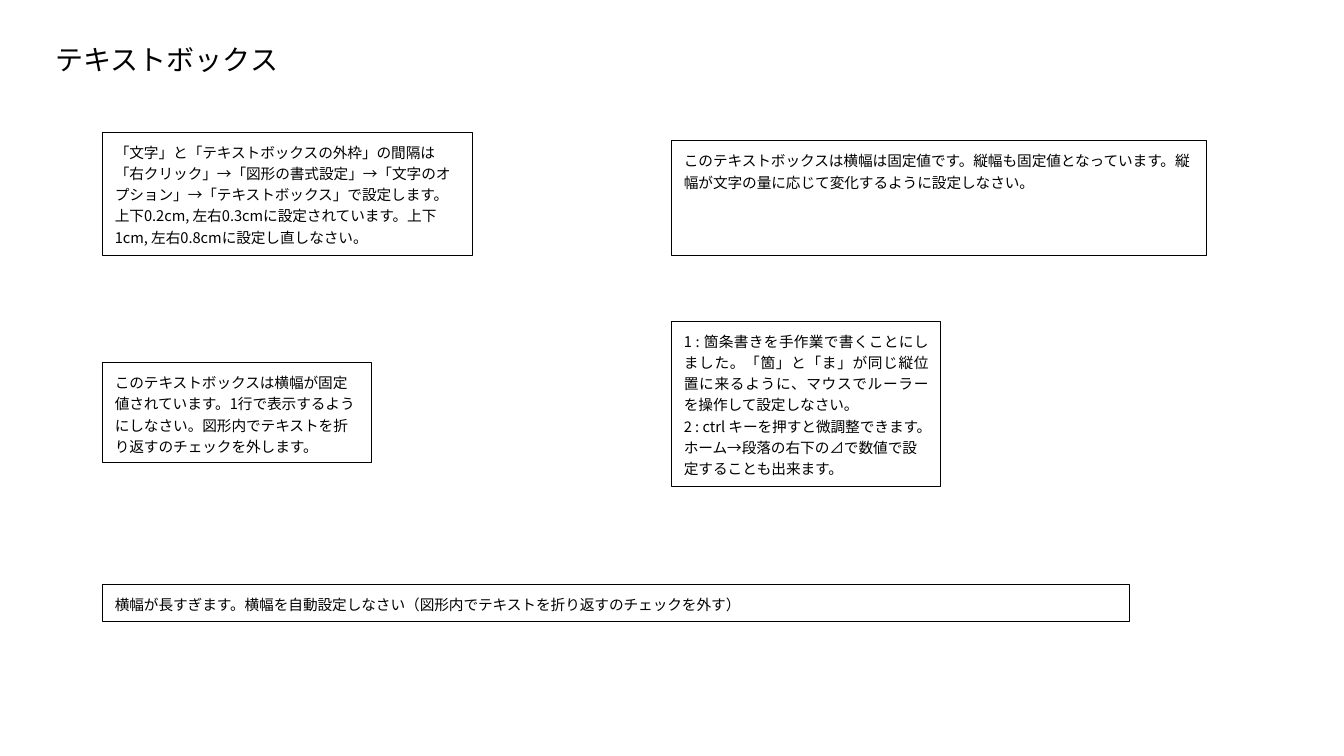
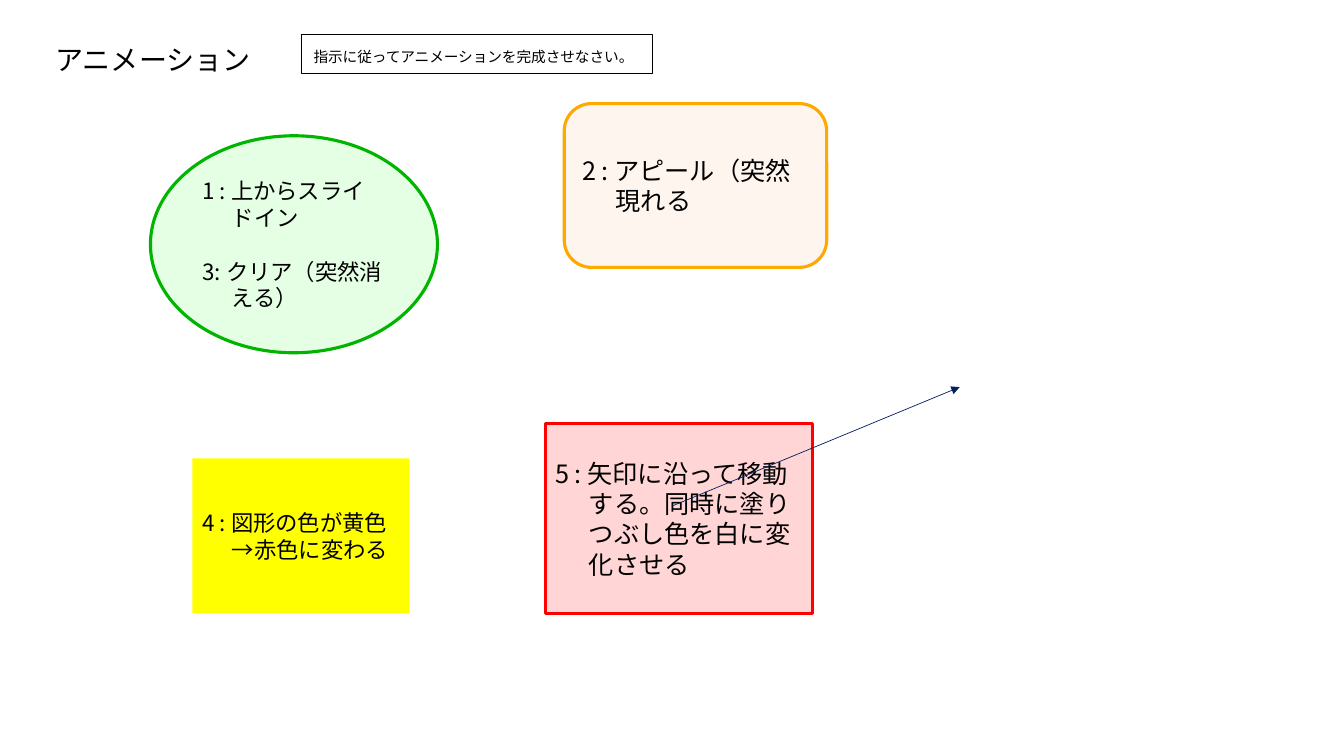
from lxml import etree
from pptx import Presentation
from pptx.dml.color import RGBColor
from pptx.enum.shapes import MSO_CONNECTOR, MSO_SHAPE
from pptx.enum.text import MSO_ANCHOR, MSO_AUTO_SIZE, PP_ALIGN
from pptx.oxml.ns import qn
from pptx.util import Pt

RECT = MSO_SHAPE.RECTANGLE
ROUNDED = MSO_SHAPE.ROUNDED_RECTANGLE
OVAL = MSO_SHAPE.OVAL
STRAIGHT = MSO_CONNECTOR.STRAIGHT
TOP, MIDDLE = MSO_ANCHOR.TOP, MSO_ANCHOR.MIDDLE
GROW, FIXED = MSO_AUTO_SIZE.SHAPE_TO_FIT_TEXT, MSO_AUTO_SIZE.NONE
LEFT, JUSTIFY = PP_ALIGN.LEFT, PP_ALIGN.JUSTIFY

FONT = "Noto Sans CJK JP"
BLACK, WHITE, NAVY = "000000", "FFFFFF", "002060"
LINE_HEIGHT = 1.2
LEFT_COLUMN, RIGHT_COLUMN = 73.5, 480

TITLE = {"vertical_anchor": MIDDLE, "word_wrap": True, "auto_size": FIXED}
STEP = {"vertical_anchor": MIDDLE, "word_wrap": True, "auto_size": FIXED}
FRAME = {
    "vertical_anchor": TOP, "word_wrap": True, "auto_size": GROW,
    "margin_left": Pt(8.5), "margin_right": Pt(8.5),
    "margin_top": Pt(5.7), "margin_bottom": Pt(5.7),
}


def color(hex_value):
    return RGBColor.from_string(hex_value)


def write(shape, texts, size, frame_format, spacing=1, indent=0, gap=0, aligns=(LEFT,)):
    frame = shape.text_frame
    for name, value in frame_format.items():
        setattr(frame, name, value)
    for index, text in enumerate(texts):
        paragraph = frame.paragraphs[0] if index == 0 else frame.add_paragraph()
        paragraph_format = {
            "alignment": aligns[min(index, len(aligns) - 1)],
            "line_spacing": Pt(round(size * LINE_HEIGHT * spacing, 1)),
            "space_before": Pt(gap if index else 0),
        }
        for name, value in paragraph_format.items():
            setattr(paragraph, name, value)
        if indent:
            properties = paragraph._p.get_or_add_pPr()
            properties.set("marL", str(Pt(indent)))
            properties.set("indent", str(-Pt(indent)))
        run = paragraph.add_run()
        run.text = text
        run.font.size = Pt(size)
        run.font.color.rgb = color(BLACK)
        run.font.name = FONT
        run_properties = run._r.get_or_add_rPr()
        run_properties.set("lang", "ja-JP")
        etree.SubElement(run_properties, qn("a:ea")).set("typeface", FONT)


deck = Presentation()
deck.slide_width, deck.slide_height = Pt(960), Pt(540)

slides = []
for heading in ("テキストボックス", "アニメーション"):
    slide = deck.slides.add_slide(deck.slide_layouts[6])
    slide.background.fill.solid()
    slide.background.fill.fore_color.rgb = color(WHITE)
    title = slide.shapes.add_textbox(Pt(32.5), Pt(27.5), Pt(206), Pt(32.5))
    write(title, [heading], 20, TITLE, spacing=0.9)
    slides.append(slide)
exercise_slide, animation_slide = slides

steps = [
    (OVAL, (107.5, 97, 205, 155), "E5FFE5", "00B400", 2.25, 16, 21,
     ["1 : 上からスライドイン", "3: クリア（突然消える）"]),
    (RECT, (137.5, 327.5, 155, 110.5), "FFFF00", None, 0, 16, 21,
     ["4 : 図形の色が黄色→赤色に変わる"]),
    (ROUNDED, (403, 74, 187.5, 117), "FFF5EF", "FEA900", 2.25, 18, 24,
     ["2 : アピール（突然現れる"]),
    (RECT, (389.5, 302.5, 191, 136), "FFD5D5", "FF0000", 2, 18, 24,
     ["5 : 矢印に沿って移動する。同時に塗りつぶし色を白に変化させる"]),
]
for outline, place, fill, border, width, size, indent, texts in steps:
    step = animation_slide.shapes.add_shape(outline, *map(Pt, place))
    step.shadow.inherit = False
    step.fill.solid()
    step.fill.fore_color.rgb = color(fill)
    if border:
        step.line.color.rgb = color(border)
        step.line.width = Pt(width)
    else:
        step.line.fill.background()
    write(step, texts, size, STEP, indent=indent, gap=size * LINE_HEIGHT)

motion_arrow = animation_slide.shapes.add_connector(
    STRAIGHT, Pt(480), Pt(361.5), Pt(685.5), Pt(276.5))
motion_arrow.line.color.rgb = color(NAVY)
motion_arrow.line.width = Pt(0.5)
etree.SubElement(motion_arrow.line._get_or_add_ln(), qn("a:tailEnd")).set("type", "triangle")
etree.SubElement(motion_arrow._element.spPr, qn("a:effectLst"))

framed_texts = [
    (exercise_slide, (LEFT_COLUMN, 94.5, 264, 88), {}, 1.2, (LEFT,),
     ["「文字」と「テキストボックスの外枠」の間隔は「右クリック」→「図形の書式設定」→「文字のオプション」→「テキストボックス」で設定します。上下0.2cm, 左右0.3cmに設定されています。上下1cm, 左右0.8cmに設定し直しなさい。"]),
    (exercise_slide, (RIGHT_COLUMN, 100.5, 382, 82), {"auto_size": FIXED}, 1.2, (LEFT,),
     ["このテキストボックスは横幅は固定値です。縦幅も固定値となっています。縦幅が文字の量に応じて変化するように設定しなさい。"]),
    (exercise_slide, (LEFT_COLUMN, 259, 192, 71.5), {}, 1.2, (LEFT,),
     ["このテキストボックスは横幅が固定値されています。1行で表示するようにしなさい。図形内でテキストを折り返すのチェックを外します。"]),
    (exercise_slide, (RIGHT_COLUMN, 229.5, 192, 118), {}, 1.2, (JUSTIFY, LEFT),
     ["1 : 箇条書きを手作業で書くことにしました。「箇」と「ま」が同じ縦位置に来るように、マウスでルーラーを操作して設定しなさい。",
      "2 : ctrl キーを押すと微調整できます。ホーム→段落の右下の⊿で数値で設定することも出来ます。"]),
    (exercise_slide, (LEFT_COLUMN, 417.5, 733.5, 26.5), {}, 1.2, (LEFT,),
     ["横幅が長すぎます。横幅を自動設定しなさい（図形内でテキストを折り返すのチェックを外す）"]),
    (animation_slide, (215.5, 24.5, 250.5, 28), {"word_wrap": False}, 1.3, (LEFT,),
     ["指示に従ってアニメーションを完成させなさい。"]),
]
for slide, place, changes, spacing, aligns, texts in framed_texts:
    framed = slide.shapes.add_shape(RECT, *map(Pt, place))
    framed.shadow.inherit = False
    framed.fill.background()
    framed.line.color.rgb = color(BLACK)
    framed.line.width = Pt(0.75)
    write(framed, texts, 10.5, {**FRAME, **changes}, spacing, aligns=aligns)

deck.save("out.pptx")
